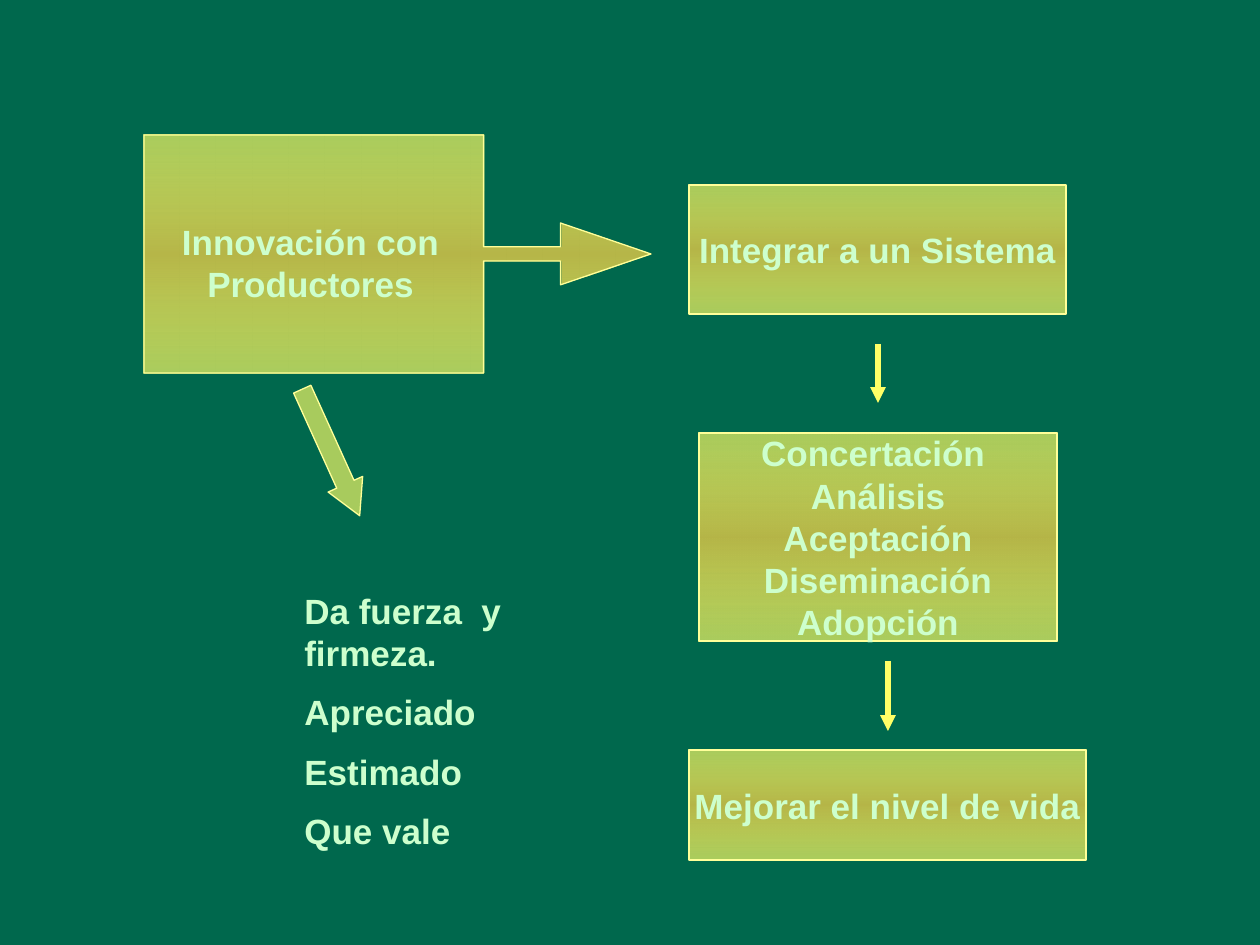
from lxml.etree import SubElement
from pptx import Presentation
from pptx.dml.color import RGBColor
from pptx.enum.shapes import MSO_CONNECTOR, MSO_SHAPE
from pptx.enum.text import MSO_ANCHOR, PP_ALIGN
from pptx.oxml.ns import qn
from pptx.util import Emu, Pt

PX_PER_INCH = 126
GREEN = RGBColor(0x00, 0x68, 0x4D)
YELLOW = RGBColor(0xFF, 0xFF, 0x66)
PALE_YELLOW = RGBColor(0xFF, 0xFF, 0x99)
MINT = RGBColor(0xCD, 0xFF, 0xCD)
ALPHA = ("alpha", 66000)
SHADE = ("shade", 46275)


def px(n):
    return Emu(round(n * 914400 / PX_PER_INCH))


def add_color(parent, color, effect):
    """Append a colour element with one (name, value) effect."""
    name, value = effect
    clr = SubElement(parent, qn("a:srgbClr"), val=str(color))
    SubElement(clr, qn(f"a:{name}"), val=str(value))


def write(tf, lines, align=PP_ALIGN.CENTER, anchor=MSO_ANCHOR.MIDDLE,
          wrap=False, before=0, size=20, color=MINT, bold=True, font="Arial"):
    tf.word_wrap = wrap
    tf.vertical_anchor = anchor
    for i, line in enumerate(lines):
        p = tf.paragraphs[0] if i == 0 else tf.add_paragraph()
        p.alignment = align
        p.space_before = Pt(before if i else 0)
        r = p.add_run()
        r.text = line
        r.font.name, r.font.size, r.font.bold = font, Pt(size), bold
        r.font.color.rgb = color


class Deck:
    """Holds the style and the current slide."""

    def __init__(self, width, height):
        self.prs = Presentation()
        self.prs.slide_width, self.prs.slide_height = px(width), px(height)
        self.slide = self.prs.slides.add_slide(self.prs.slide_layouts[6])
        self.shapes = self.slide.shapes
        fill = self.slide.background.fill
        fill.solid()
        fill.fore_color.rgb = GREEN

    def shape(self, kind, box, adj=(), rotation=0):
        sp = self.shapes.add_shape(kind, *map(px, box))
        sp.shadow.inherit = False
        sp.rotation = rotation
        for i, value in enumerate(adj):
            sp.adjustments[i] = value
        sp.line.color.rgb = PALE_YELLOW
        sp.line.width = Pt(0.75)
        return sp

    def glass(self, kind, box, lines=(), **fmt):
        """Shape with a see-through yellow gradient, darkest halfway down."""
        sp = self.shape(kind, box, **fmt)
        sp.fill.gradient()
        sp.fill.gradient_angle = 270
        stops = sp.element.spPr.find(qn("a:gradFill")).find(qn("a:gsLst"))
        for stop in list(stops):
            stops.remove(stop)
        for pos, effect in ((0, ALPHA), (50000, SHADE), (100000, ALPHA)):
            add_color(SubElement(stops, qn("a:gs"), pos=str(pos)), YELLOW, effect)
        write(sp.text_frame, lines)
        return sp

    def flat(self, kind, box, **fmt):
        """Shape with a plain see-through yellow fill."""
        sp = self.shape(kind, box, **fmt)
        sp.fill.solid()
        sp.fill.fore_color.rgb = YELLOW
        clr = sp.element.spPr.find(qn("a:solidFill"))[0]
        SubElement(clr, qn("a:alpha"), val=str(ALPHA[1]))
        return sp

    def text(self, box, lines, **fmt):
        tb = self.shapes.add_textbox(*map(px, box))
        write(tb.text_frame, lines, **fmt)
        return tb

    def arrow_down(self, x, top, bottom):
        cxn = self.shapes.add_connector(
            MSO_CONNECTOR.STRAIGHT, px(x), px(top), px(x), px(bottom))
        cxn.line.color.rgb = YELLOW
        cxn.line.width = Pt(3)
        SubElement(cxn.line._get_or_add_ln(), qn("a:tailEnd"), type="triangle")
        SubElement(cxn.element.spPr, qn("a:effectLst"))
        return cxn


def main():
    deck = Deck(1260, 945)

    steps = (
        ((689, 185, 377, 129), ["Integrar a un Sistema"]),
        ((699, 433, 358, 208), ["Concertación ", "Análisis", "Aceptación",
                                "Diseminación", "Adopción"]),
        ((689, 750, 397, 110), ["Mejorar el nivel de vida"]),
    )
    for box, lines in steps:
        deck.glass(MSO_SHAPE.RECTANGLE, box, lines)

    deck.flat(MSO_SHAPE.DOWN_ARROW, (312, 383, 38, 139),
              adj=(0.5, 0.91), rotation=335.6)
    deck.text((292, 583, 328, 288),
              ["Da fuerza  y firmeza.", "Apreciado", "Estimado", "Que vale"],
              align=PP_ALIGN.LEFT, anchor=MSO_ANCHOR.TOP, wrap=True, before=10)

    deck.arrow_down(878, 344, 403)
    deck.arrow_down(888, 661, 731)

    callout = deck.glass(MSO_SHAPE.RIGHT_ARROW_CALLOUT, (144, 135, 507, 238),
                         adj=(0.06, 0.13, 0.38, 0.67))
    label = deck.text((168, 214, 285, 97), ["Innovación con", "Productores"])
    deck.shapes.add_group_shape([callout, label])

    deck.prs.save("out.pptx")


if __name__ == "__main__":
    main()
